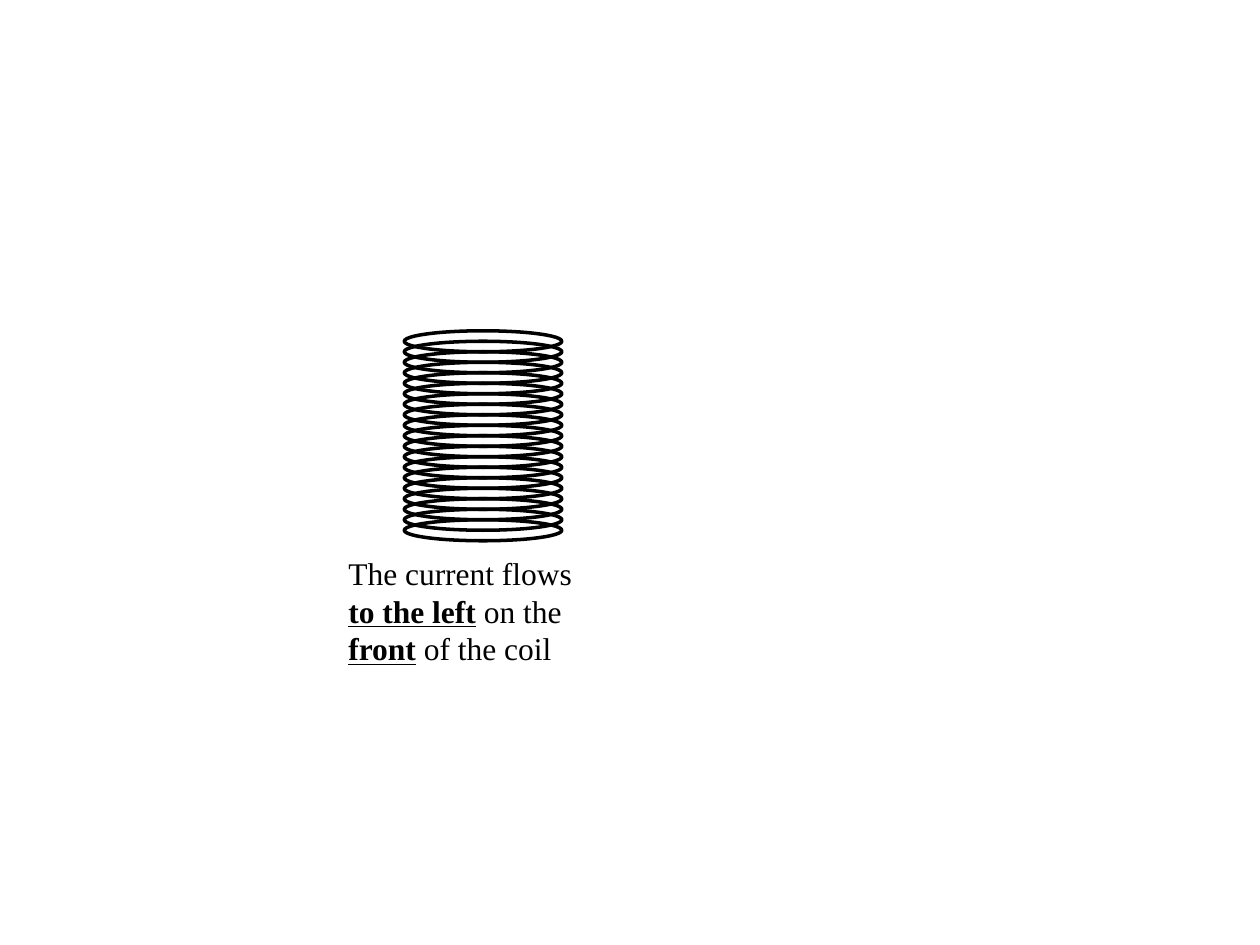
import pptx
import pptx.dml.color
import pptx.enum.shapes
import pptx.enum.text
import pptx.util

Pt = pptx.util.Pt
BLACK = "000000"
TURN_COUNT = 19


def color(hex_string):
    """Return the RGB colour for a hex string."""
    return pptx.dml.color.RGBColor.from_string(hex_string)


def add_coil(slide, left, top, width, height):
    """Stack overlapping turns, each half a turn below the last, to fill the box."""
    pitch = height / (TURN_COUNT + 1)
    thickness = 2 * pitch
    coil = slide.shapes.add_group_shape()
    for index in range(TURN_COUNT):
        center_y = top + pitch * (index + 1)
        turn = coil.shapes.add_shape(
            pptx.enum.shapes.MSO_SHAPE.OVAL,
            Pt(left + (width - thickness) / 2), Pt(center_y - width / 2),
            Pt(thickness), Pt(width))
        turn.rotation = 90
        turn.shadow.inherit = False
        turn.fill.background()
        turn.line.color.rgb = color(BLACK)
        turn.line.width = Pt(2)


def add_caption(slide, left, top, width, height):
    """Write the sentence on the current, with its key words emphasised."""
    caption = slide.shapes.add_textbox(Pt(left), Pt(top), Pt(width), Pt(height))
    text_frame = caption.text_frame
    text_frame.word_wrap = True
    text_frame.auto_size = pptx.enum.text.MSO_AUTO_SIZE.SHAPE_TO_FIT_TEXT
    paragraph = text_frame.paragraphs[0]
    for text, emphasised in (
        ("The current flows ", False),
        ("to the left", True),
        (" on the ", False),
        ("front", True),
        (" of the coil", False),
    ):
        run = paragraph.add_run()
        run.text = text
        run.font.name = "Times New Roman"
        run.font.size = Pt(18)
        run.font.color.rgb = color(BLACK)
        run.font.bold = emphasised
        run.font.underline = emphasised


def main():
    """Build and save the slide."""
    presentation = pptx.Presentation()
    presentation.slide_width = Pt(720)
    presentation.slide_height = Pt(540)
    slide = presentation.slides.add_slide(presentation.slide_layouts[6])
    add_coil(slide, left=231, top=189, width=90, height=120)
    add_caption(slide, left=192, top=312.9, width=150, height=72.7)
    presentation.save("out.pptx")


if __name__ == "__main__":
    main()
